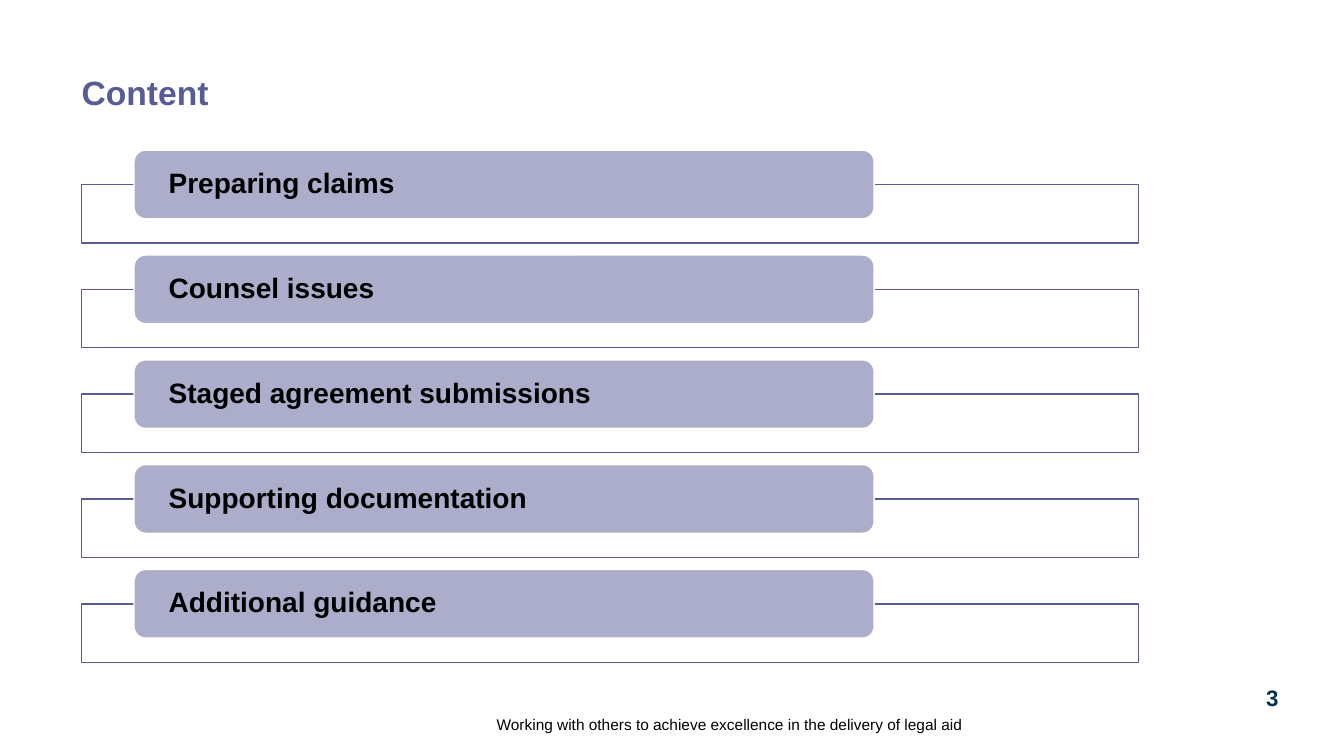
from pptx import Presentation
from pptx.dml.color import RGBColor
from pptx.enum.shapes import MSO_SHAPE as Shape
from pptx.enum.text import MSO_ANCHOR as Anchor, PP_ALIGN as Align
from pptx.util import Inches, Pt


def color(value):
    return RGBColor.from_string(value)


class ContentSlide:
    """Draw the elements of a contents slide in one style."""

    font = "Arial"
    accent = "575C96"
    bar = "ABADCB"
    white = "FFFFFF"
    black = "000000"
    navy = "003057"

    def __init__(self, page):
        self.page = page

    def set_text(self, holder, text, size, ink, bold=True, align=Align.LEFT,
                 anchor=Anchor.TOP, inset=0, spacing=1.0):
        frame = holder.text_frame
        frame.word_wrap = True
        frame.vertical_anchor = anchor
        frame.margin_left = frame.margin_right = Inches(inset)
        frame.margin_top = frame.margin_bottom = 0
        para = frame.paragraphs[0]
        para.text = text
        para.alignment = align
        para.line_spacing = spacing
        para.font.name = self.font
        para.font.size = Pt(size)
        para.font.bold = bold
        para.font.color.rgb = color(ink)

    def label(self, left, top, width, height, text, size, ink, **style):
        box = self.page.shapes.add_textbox(
            Inches(left), Inches(top), Inches(width), Inches(height))
        self.set_text(box, text, size, ink, **style)

    def panel(self, kind, left, top, width, height, fill, line):
        shape = self.page.shapes.add_shape(
            kind, Inches(left), Inches(top), Inches(width), Inches(height))
        shape.shadow.inherit = False
        shape.fill.solid()
        shape.fill.fore_color.rgb = color(fill)
        shape.line.color.rgb = color(line)
        shape.line.width = Pt(1)
        return shape

    def topic(self, top, text):
        self.panel(Shape.RECTANGLE, 0.81, top + 0.34, 10.48, 0.58, self.white, self.accent)
        bar = self.panel(Shape.ROUNDED_RECTANGLE, 1.33, top, 7.34, 0.68, self.bar, self.white)
        self.set_text(bar, text, 20, self.black, anchor=Anchor.MIDDLE, inset=0.31, spacing=0.9)


def main():
    deck = Presentation()
    deck.slide_width = Inches(13.33)
    deck.slide_height = Inches(7.5)
    slide = ContentSlide(deck.slides.add_slide(deck.slide_layouts[6]))

    slide.label(0.81, 0.76, 8.44, 0.38, "Content", 24, slide.accent, spacing=0.9)
    topics = ["Preparing claims", "Counsel issues", "Staged agreement submissions",
              "Supporting documentation", "Additional guidance"]
    for index, text in enumerate(topics):
        slide.topic(1.49 + 1.04 * index, text)
    slide.label(2.1, 6.92, 7.45, 0.36,
                "Working with others to achieve excellence in the delivery of legal aid",
                11, slide.black, bold=False, align=Align.RIGHT, anchor=Anchor.BOTTOM)
    slide.label(12.47, 6.79, 0.3, 0.28, "3", 16, slide.navy, align=Align.CENTER)

    deck.save("out.pptx")


if __name__ == "__main__":
    main()
